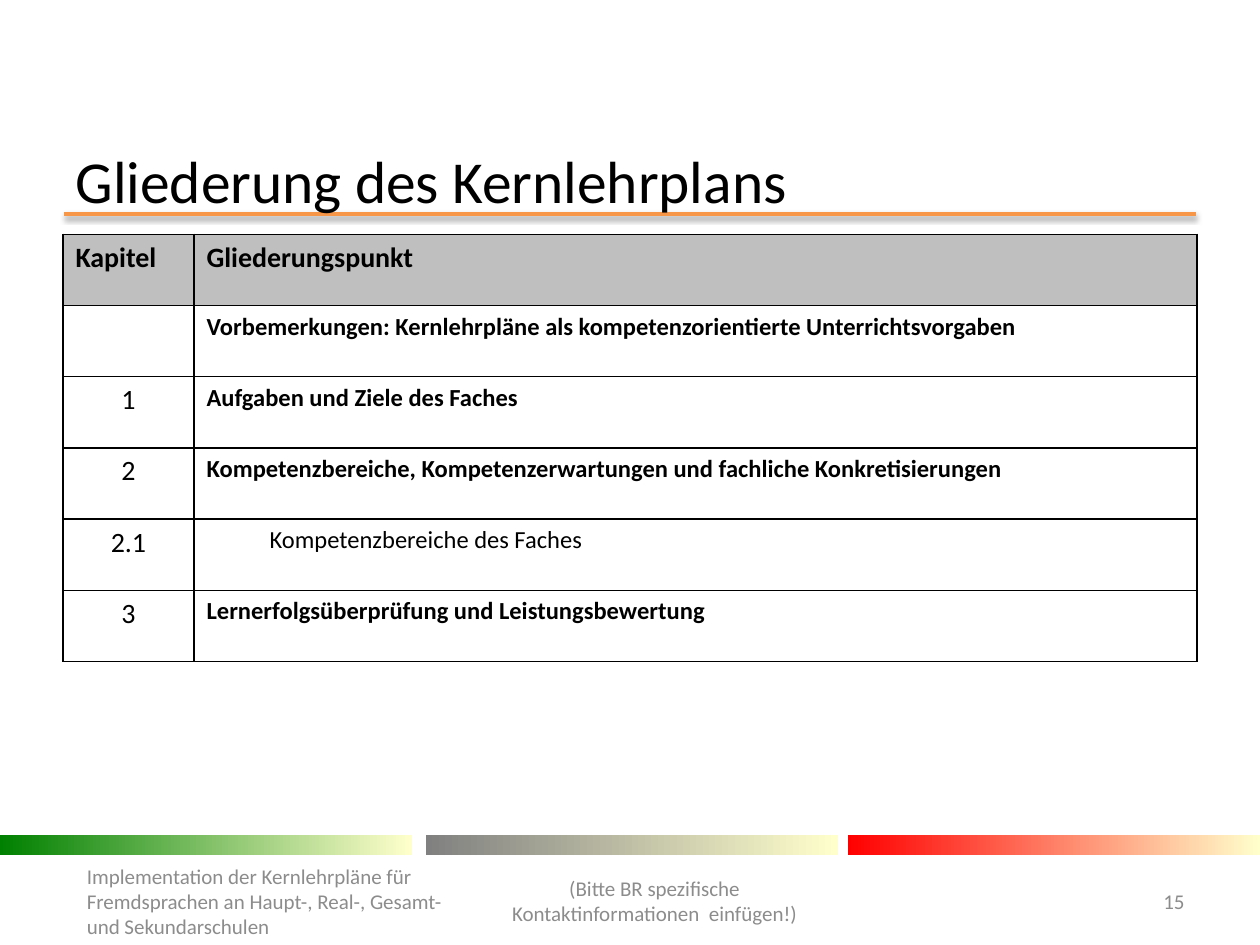
from dataclasses import dataclass

from lxml.etree import SubElement
from pptx import Presentation
from pptx.dml.color import RGBColor
from pptx.enum.shapes import MSO_CONNECTOR, MSO_SHAPE
from pptx.enum.text import MSO_ANCHOR, PP_ALIGN
from pptx.oxml import parse_xml
from pptx.oxml.ns import nsdecls, qn
from pptx.util import Inches, Pt


@dataclass(frozen=True)
class Theme:
    font: str = "Calibri"
    text: str = "000000"
    muted: str = "8C8C8C"
    accent: str = "F79646"
    header: str = "BFBFBF"
    green: str = "008000"
    gray: str = "808080"
    red: str = "FF0000"
    cream: str = "FFFFCC"
    title_size: int = 34
    chapter_size: int = 16
    topic_size: int = 14
    footer_size: int = 12


theme = Theme()


def add_text(frame, text, size, color=theme.text, bold=False, align=PP_ALIGN.LEFT):
    paragraph = frame.paragraphs[0]
    paragraph.alignment = align
    run = paragraph.add_run()
    run.text = text
    run.font.name = theme.font
    run.font.size = Pt(size)
    run.font.bold = bold
    run.font.color.rgb = RGBColor.from_string(color)
    return paragraph


def add_borders(cell):
    properties = cell._tc.get_or_add_tcPr()
    for position, side in enumerate(("lnL", "lnR", "lnT", "lnB")):
        border = parse_xml(
            f'<a:{side} {nsdecls("a")} w="{Pt(1)}"><a:solidFill>'
            f'<a:srgbClr val="{theme.text}"/></a:solidFill></a:{side}>'
        )
        properties.insert(position, border)


presentation = Presentation()
presentation.slide_width = Inches(10)
presentation.slide_height = Inches(7.5)
slide = presentation.slides.add_slide(presentation.slide_layouts[5])
shapes = slide.shapes

# Rule under the title, with a soft shadow
title_rule = shapes.add_connector(
    MSO_CONNECTOR.STRAIGHT, Inches(0.51), Inches(1.7), Inches(9.49), Inches(1.7)
)
title_rule.line.color.rgb = RGBColor.from_string(theme.accent)
title_rule.line.width = Pt(2)
effects = SubElement(title_rule._element.spPr, qn("a:effectLst"))
effects.append(parse_xml(
    f'<a:outerShdw {nsdecls("a")} blurRad="{Pt(3.1)}" dist="{Pt(1.6)}" '
    'dir="5400000" rotWithShape="0"><a:srgbClr val="000000">'
    '<a:alpha val="38000"/></a:srgbClr></a:outerShdw>'
))

# Colour bands above the footer
for left, band_color in ((0, theme.green), (3.38, theme.gray), (6.73, theme.red)):
    band = shapes.add_shape(
        MSO_SHAPE.RECTANGLE, Inches(left), Inches(6.63), Inches(3.27), Inches(0.16)
    )
    band.shadow.inherit = False
    band.line.fill.background()
    band.fill.gradient()
    band.fill.gradient_angle = 0
    for stop, color, position in zip(
        band.fill.gradient_stops, (band_color, theme.cream), (0, 1)
    ):
        stop.color.rgb = RGBColor.from_string(color)
        stop.position = position

# Title, brought in front of the rule
title = shapes.title
title.left, title.top = Inches(0.5), Inches(1.23)
title.width, title.height = Inches(9), Inches(0.39)
title.text_frame.vertical_anchor = MSO_ANCHOR.MIDDLE
add_text(title.text_frame, "Gliederung des Kernlehrplans", theme.title_size)
title.element.getparent().append(title.element)

# Outline table: chapter, topic, level
outline = [
    ("Kapitel", "Gliederungspunkt", 0),
    ("", "Vorbemerkungen: Kernlehrpläne als kompetenzorientierte Unterrichtsvorgaben", 0),
    ("1", "Aufgaben und Ziele des Faches", 0),
    ("2", "Kompetenzbereiche, Kompetenzerwartungen und fachliche Konkretisierungen", 0),
    ("2.1", "Kompetenzbereiche des Faches", 1),
    ("3", "Lernerfolgsüberprüfung und Leistungsbewertung", 0),
]
outline_table = shapes.add_table(
    len(outline), 2, Inches(0.5), Inches(1.86), Inches(9), Inches(3.39)
).table
outline_table.columns[0].width = Inches(1.04)
outline_table.columns[1].width = Inches(7.96)

for row, (chapter, topic, level) in enumerate(outline):
    is_header = row == 0
    chapter_cell, topic_cell = outline_table.rows[row].cells
    for cell in (chapter_cell, topic_cell):
        if is_header:
            cell.fill.solid()
            cell.fill.fore_color.rgb = RGBColor.from_string(theme.header)
        else:
            cell.fill.background()
        add_borders(cell)
    if chapter:
        add_text(
            chapter_cell.text_frame, chapter, theme.chapter_size, bold=is_header,
            align=PP_ALIGN.LEFT if is_header else PP_ALIGN.CENTER,
        )
    topic_paragraph = add_text(
        topic_cell.text_frame, topic,
        theme.chapter_size if is_header else theme.topic_size, bold=level == 0,
    )
    if level:
        topic_paragraph.level = level
        topic_paragraph._p.get_or_add_pPr().set("marL", str(Inches(0.5)))

# Footer: page number, event, contact
footer = [
    (8.86, 6.95, 0.64, 0.4, PP_ALIGN.RIGHT, "15"),
    (0.59, 6.81, 3.15, 0.68, PP_ALIGN.LEFT,
     "Implementation der Kernlehrpläne für Fremdsprachen an Haupt-, Real-, "
     "Gesamt- und Sekundarschulen"),
    (3.74, 6.79, 2.91, 0.71, PP_ALIGN.CENTER,
     "(Bitte BR spezifische Kontaktinformationen  einfügen!)"),
]
for left, top, width, height, align, text in footer:
    note = shapes.add_textbox(
        Inches(left), Inches(top), Inches(width), Inches(height)
    ).text_frame
    note.word_wrap = True
    note.vertical_anchor = MSO_ANCHOR.MIDDLE
    add_text(note, text, theme.footer_size, theme.muted, align=align)

presentation.save("out.pptx")
